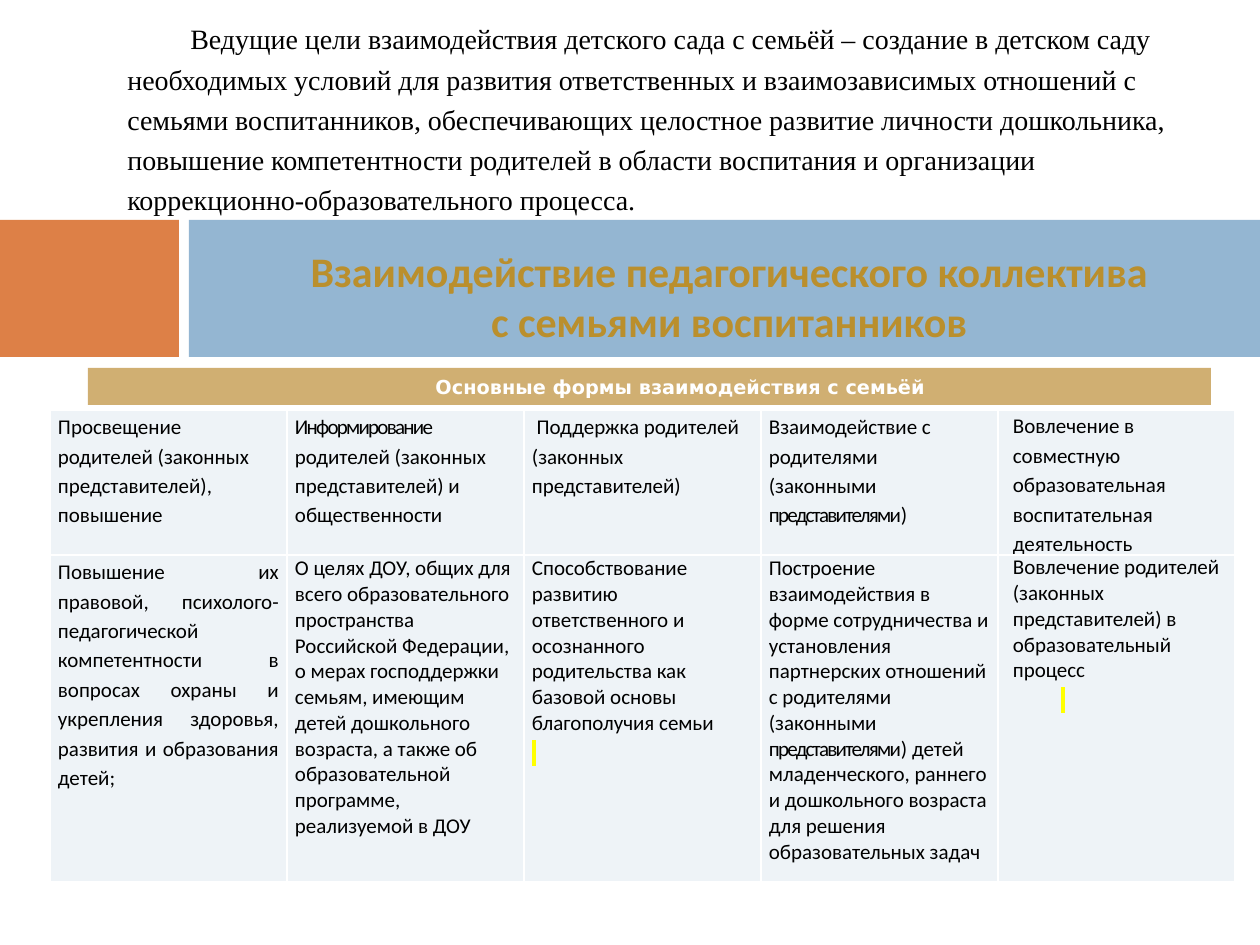
from dataclasses import dataclass

import lxml.etree
import pptx
import pptx.dml.color
import pptx.enum.shapes
import pptx.enum.text
import pptx.oxml
import pptx.oxml.ns
import pptx.util

ALIGN = pptx.enum.text.PP_ALIGN
ANCHOR = pptx.enum.text.MSO_ANCHOR
EXACT = pptx.util.Pt(14.7)


@dataclass(frozen=True)
class Theme:
    """Colours, fonts and type sizes of the slide."""
    orange: str = "DD8047"
    blue: str = "94B6D2"
    sand: str = "D0AF72"
    gold: str = "BA8F2D"
    cell: str = "EEF3F7"
    white: str = "FFFFFF"
    black: str = "000000"
    marker: str = "FFFF00"
    sans: str = "Calibri"
    serif: str = "Times New Roman"
    label: str = "DejaVu Sans"
    title_size: int = 24
    body_size: int = 16
    cell_size: int = 12
    label_size: int = 11


THEME = Theme()


@dataclass(frozen=True)
class Para:
    """Spans of one paragraph, each a text or a (text, mark) pair, with its layout."""
    spans: tuple
    leading: float = 1.15
    align: int = ALIGN.LEFT
    left: int = 0
    first: int = 0
    after: int = 0


TIGHT, MARKED = "tight", "marked"
ROWS = (
    (
        (Para(("Просвещение родителей (законных представителей), повышение",)),),
        (Para((("Информирование ", TIGHT),
               "родителей (законных представителей) и общественности")),),
        (Para((" Поддержка родителей (законных представителей)",)),),
        (Para(("Взаимодействие с родителями",)),
         Para(("(законными ", ("представителями", TIGHT), ")"))),
        (Para(("Вовлечение в совместную",), left=15),
         Para(("образовательная воспитательная деятельность",), left=15)),
    ),
    (
        (Para(("Повышение их правовой, психолого-педагогической компетентности в вопросах "
               "охраны и укрепления здоровья, развития и образования детей;",),
              align=ALIGN.JUSTIFY),),
        (Para(("О целях ДОУ, общих для всего образовательного пространства Российской "
               "Федерации, о мерах господдержки семьям, имеющим детей дошкольного возраста, "
               "а также об образовательной программе, реализуемой в ДОУ",),
              EXACT, after=15),),
        (Para(("Способствование развитию ответственного и осознанного родительства "
               "как базовой основы благополучия семьи",), EXACT),
         Para(((" ", MARKED),), align=ALIGN.JUSTIFY)),
        (Para(("Построение взаимодействия в форме сотрудничества и установления партнерских "
               "отношений с родителями (законными ", ("представителями", TIGHT),
               ") детей младенческого, раннего и дошкольного возраста для решения "
               "образовательных задач"), EXACT),),
        (Para(("Вовлечение родителей (законных представителей) в образовательный процесс",),
              EXACT, left=15),
         Para(((" ", MARKED),), align=ALIGN.JUSTIFY, first=63)),
    ),
)


def px(length):
    """Turn pixels into EMU."""
    return pptx.util.Emu(round(length * 914400 / 126))


def rgb(code):
    """Turn a hex code into a colour."""
    return pptx.dml.color.RGBColor.from_string(code)


def set_font(font, name, size, color, bold=False):
    """Set the face, size, colour and weight of a font."""
    font.name, font.size, font.bold = name, pptx.util.Pt(size), bold
    font.color.rgb = rgb(color)


def set_indent(paragraph, left, first):
    """Set the left margin and first-line indent of a paragraph."""
    properties = paragraph._p.get_or_add_pPr()
    properties.set("marL", str(px(left)))
    properties.set("indent", str(px(first)))


def add_solid(parent, color):
    """Append a colour element to an XML parent."""
    lxml.etree.SubElement(parent, pptx.oxml.ns.qn("a:srgbClr"), val=color)


def add_bar(slide, box, color):
    """Add a plain filled rectangle."""
    bar = slide.shapes.add_shape(pptx.enum.shapes.MSO_SHAPE.RECTANGLE, *map(px, box))
    bar.shadow.inherit = False
    bar.fill.solid()
    bar.fill.fore_color.rgb = rgb(color)
    bar.line.fill.background()
    return bar


def add_intro(slide, box, text):
    """Add the opening paragraph above the title band."""
    frame = slide.shapes.add_textbox(*map(px, box)).text_frame
    frame.word_wrap = True
    paragraph = frame.paragraphs[0]
    paragraph.text = text
    paragraph.line_spacing = 1.2
    paragraph.space_before = pptx.util.Pt(7)
    set_indent(paragraph, 0, 63)
    set_font(paragraph.font, THEME.serif, THEME.body_size, THEME.black)


def set_title(slide, box, text):
    """Place and format the title placeholder."""
    title = slide.shapes.title
    title.left, title.top, title.width, title.height = map(px, box)
    frame = title.text_frame
    frame.auto_size = pptx.enum.text.MSO_AUTO_SIZE.NONE
    frame.vertical_anchor = ANCHOR.MIDDLE
    paragraph = frame.paragraphs[0]
    paragraph.text = text
    paragraph.alignment = ALIGN.CENTER
    set_font(paragraph.font, THEME.sans, THEME.title_size, THEME.gold, True)


def add_label(slide, box, text):
    """Add the captioned bar above the table."""
    frame = add_bar(slide, box, THEME.sand).text_frame
    frame.vertical_anchor = ANCHOR.MIDDLE
    paragraph = frame.paragraphs[0]
    paragraph.text = text
    paragraph.alignment = ALIGN.CENTER
    set_indent(paragraph, 0, 62)
    set_font(paragraph.font, THEME.label, THEME.label_size, THEME.white, True)


def add_span(paragraph, text, mark=None):
    """Add a run that may be condensed or highlighted."""
    span = paragraph.add_run()
    span.text = text
    properties = span._r.get_or_add_rPr()
    if mark == TIGHT:
        properties.set("spc", "-100")
    elif mark == MARKED:
        add_solid(lxml.etree.SubElement(properties, pptx.oxml.ns.qn("a:highlight")), THEME.marker)


def fill_paragraph(paragraph, para):
    """Write one table paragraph."""
    paragraph.alignment = para.align
    paragraph.line_spacing = para.leading
    paragraph.space_after = pptx.util.Pt(para.after)
    set_indent(paragraph, para.left, para.first)
    set_font(paragraph.font, THEME.sans, THEME.cell_size, THEME.black)
    for span in para.spans:
        add_span(paragraph, *((span,) if isinstance(span, str) else span))


def format_cell(cell, inset):
    """Set the insets, white borders and fill of a cell."""
    cell.margin_left = cell.margin_right = px(inset)
    cell.margin_top, cell.margin_bottom = px(1 if inset else 0), 0
    properties = cell._tc.get_or_add_tcPr()
    for side in ("a:lnL", "a:lnR", "a:lnT", "a:lnB"):
        line = lxml.etree.SubElement(properties, pptx.oxml.ns.qn(side), w=str(pptx.util.Pt(1)))
        add_solid(lxml.etree.SubElement(line, pptx.oxml.ns.qn("a:solidFill")), THEME.white)
    cell.fill.solid()
    cell.fill.fore_color.rgb = rgb(THEME.cell)


def add_forms_table(slide, left, top, column_width, heights):
    """Add the table of forms of interaction."""
    count = len(ROWS[0])
    table = slide.shapes.add_table(len(ROWS), count, px(left), px(top),
                                   px(column_width * count), px(sum(heights))).table
    table.first_row = table.horz_banding = False
    for column in table.columns:
        column.width = px(column_width)
    for row, height, contents in zip(table.rows, heights, ROWS):
        row.height = px(height)
        for cell, paras in zip(row.cells, contents):
            format_cell(cell, 0 if paras[0].left else 8)
            frame = cell.text_frame
            for index, para in enumerate(paras):
                fill_paragraph(frame.add_paragraph() if index else frame.paragraphs[0], para)


def main():
    """Build and save the slide."""
    deck = pptx.Presentation()
    deck.slide_width, deck.slide_height = px(1260), px(945)
    slide = deck.slides.add_slide(deck.slide_layouts[5])
    add_bar(slide, (0, 220, 179, 137), THEME.orange)
    band = add_bar(slide, (189, 220, 1071, 137), THEME.blue)
    add_intro(slide, (115, 9, 1071, 246),
              "Ведущие цели взаимодействия детского сада с семьёй – создание в детском саду "
              "необходимых условий для развития ответственных и взаимозависимых отношений с "
              "семьями воспитанников, обеспечивающих целостное развитие личности дошкольника, "
              "повышение компетентности родителей в области воспитания и организации "
              "коррекционно-образовательного процесса.")
    set_title(slide, (189, 227, 1071, 137),
              " Взаимодействие педагогического коллектива\v с семьями воспитанников")
    band._element.addnext(slide.shapes.title._element)
    add_label(slide, (88, 368, 1123, 37), "Основные формы взаимодействия с семьёй")
    add_forms_table(slide, 50, 410, 237, (143, 327))
    deck.save("out.pptx")


if __name__ == "__main__":
    main()
